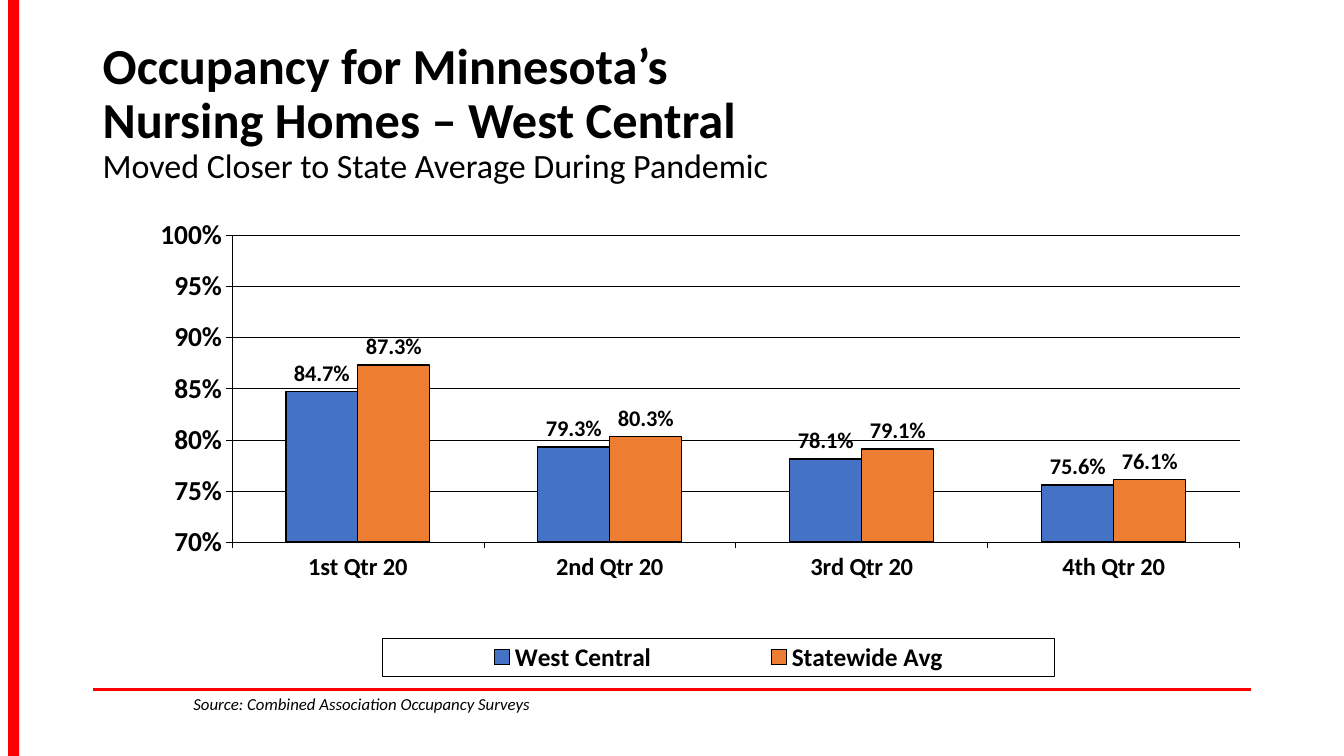
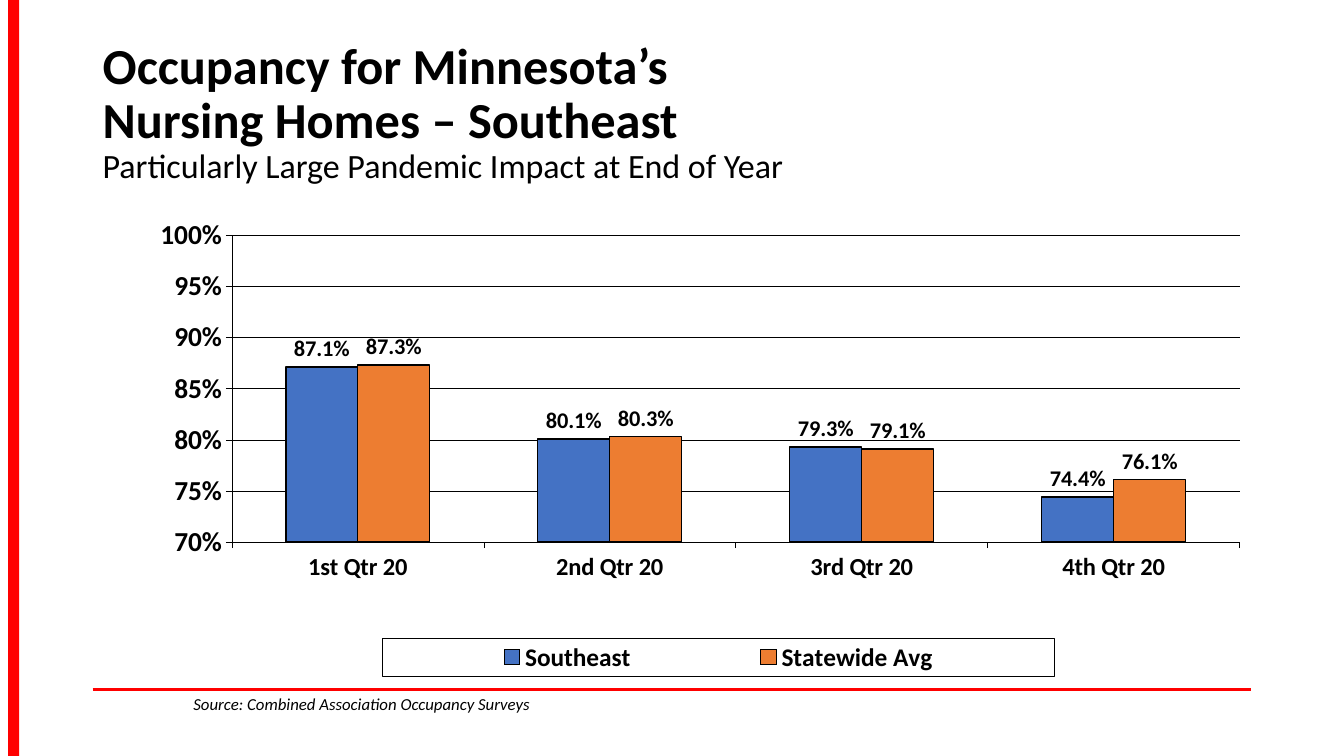
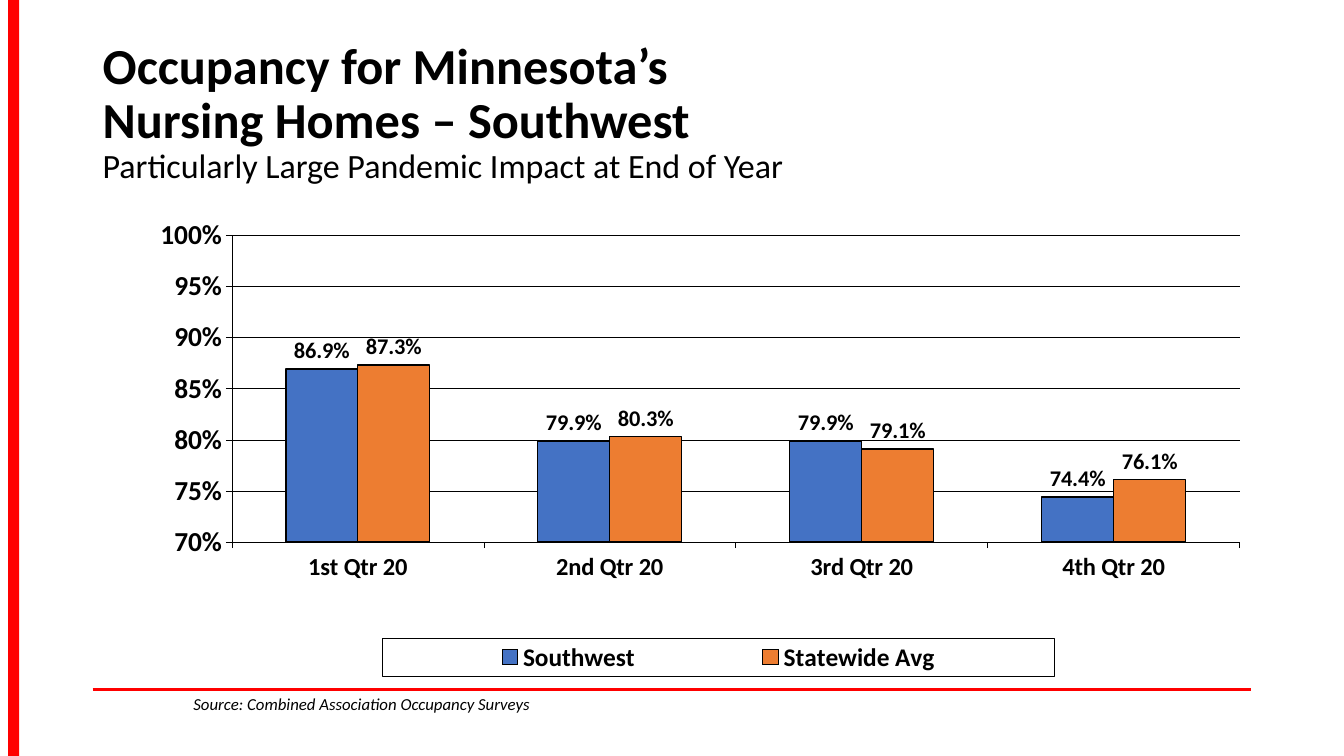
from lxml import etree
from pptx import Presentation
from pptx import util as u
from pptx.chart.data import CategoryChartData
from pptx.dml.color import RGBColor
from pptx.enum import chart as charts, shapes, text
from pptx.oxml import parse_xml
from pptx.oxml.ns import nsdecls, qn

RED = RGBColor(0xFF, 0x00, 0x00)
BLACK = RGBColor(0x00, 0x00, 0x00)
BLUE = RGBColor(0x44, 0x72, 0xC4)
ORANGE = RGBColor(0xED, 0x7D, 0x31)
FACE = "Calibri"

QUARTERS = ["1st Qtr 20", "2nd Qtr 20", "3rd Qtr 20", "4th Qtr 20"]
STATEWIDE = [0.873, 0.803, 0.791, 0.761]
LARGE_IMPACT = "Particularly Large Pandemic Impact at End of Year"
REGIONS = [
    ("West Central", "Moved Closer to State Average During Pandemic", [0.847, 0.793, 0.781, 0.756]),
    ("Southeast", LARGE_IMPACT, [0.871, 0.801, 0.793, 0.744]),
    ("Southwest", LARGE_IMPACT, [0.869, 0.799, 0.799, 0.744]),
]


def style(font, size, bold=False, italic=False):
    font.name = FACE
    font.size = u.Pt(size)
    font.bold = bold
    font.italic = italic
    font.color.rgb = BLACK


def place(parent, index, x, y, w, h, target=""):
    for old in parent.findall(qn("c:layout")):
        parent.remove(old)
    parent.insert(index, parse_xml(
        f'<c:layout {nsdecls("c")}><c:manualLayout>{target}'
        '<c:xMode val="edge"/><c:yMode val="edge"/>'
        f'<c:x val="{x}"/><c:y val="{y}"/><c:w val="{w}"/><c:h val="{h}"/>'
        '</c:manualLayout></c:layout>'))


prs = Presentation()
prs.slide_width = W = u.Inches(13.33)
prs.slide_height = H = u.Inches(7.5)
margin = u.Inches(0.92)
content = W - 2 * margin
rule_y = u.Inches(6.84)

for region, finding, occupancy in REGIONS:
    slide = prs.slides.add_slide(prs.slide_layouts[6])

    rule = slide.shapes.add_connector(
        shapes.MSO_CONNECTOR.STRAIGHT, margin, rule_y, margin + content, rule_y)
    rule.line.color.rgb = RED
    rule.line.width = u.Pt(2)
    etree.SubElement(rule._element.spPr, qn("a:effectLst"))

    band = slide.shapes.add_shape(
        shapes.MSO_SHAPE.RECTANGLE, u.Inches(0.08), 0, u.Inches(0.11), H)
    band.shadow.inherit = False
    band.fill.solid()
    band.fill.fore_color.rgb = RED
    band.line.fill.background()

    title = slide.shapes.add_textbox(margin, u.Inches(0.4), content, u.Inches(1.45)).text_frame
    title.word_wrap = True
    title.vertical_anchor = text.MSO_ANCHOR.MIDDLE
    heading = title.paragraphs[0]
    heading.text = f"Occupancy for Minnesota’s\vNursing Homes – {region}\v{finding}"
    heading.line_spacing = 0.9
    for run, size in zip(heading.runs, (36, 36, 24.3)):
        style(run.font, size, bold=size == 36)

    data = CategoryChartData(number_format="0.0%")
    data.categories = QUARTERS
    data.add_series(region, occupancy)
    data.add_series("Statewide Avg", STATEWIDE)
    chart = slide.shapes.add_chart(
        charts.XL_CHART_TYPE.COLUMN_CLUSTERED,
        margin, u.Inches(2), content, u.Inches(4.76), data).chart
    style(chart.font, 19.6, bold=True)
    chart.font.name = "Times New Roman"
    chart.has_title = False

    columns = chart.plots[0]
    columns.vary_by_categories = False
    columns.gap_width = 150
    columns.overlap = 0
    for series, color in zip(columns.series, (BLUE, ORANGE)):
        series.format.fill.solid()
        series.format.fill.fore_color.rgb = color
        series.format.line.color.rgb = BLACK
        series.format.line.width = u.Pt(1.09)

    columns.has_data_labels = True
    labels = columns.data_labels
    labels.show_value = True
    labels.number_format = "0.0%"
    labels.number_format_is_linked = False
    labels.position = charts.XL_LABEL_POSITION.OUTSIDE_END
    style(labels.font, 16, bold=True)

    percent = chart.value_axis
    percent.minimum_scale = 0.7
    percent.maximum_scale = 1
    percent.major_unit = 0.05
    percent.has_major_gridlines = True
    percent.tick_labels.number_format = "0%"
    percent.tick_labels.number_format_is_linked = False
    for axis, size in ((chart.category_axis, 17.5), (percent, 19.6)):
        axis.major_tick_mark = charts.XL_TICK_MARK.OUTSIDE
        axis.minor_tick_mark = charts.XL_TICK_MARK.NONE
        style(axis.tick_labels.font, size, bold=True)
    for line in (chart.category_axis.format.line, percent.format.line,
                 percent.major_gridlines.format.line):
        line.color.rgb = BLACK
        line.width = u.Pt(0.27)

    chart.has_legend = True
    legend = chart.legend
    legend.position = charts.XL_LEGEND_POSITION.BOTTOM
    legend.include_in_layout = False
    style(legend.font, 18.1, bold=True)
    place(legend._element, 1, 0.25, 0.91, 0.58, 0.08)
    legend._element.find(qn("c:overlay")).addnext(parse_xml(
        f'<c:spPr {nsdecls("c", "a")}><a:noFill/><a:ln w="3429"><a:solidFill>'
        f'<a:srgbClr val="{BLACK}"/></a:solidFill></a:ln></c:spPr>'))
    place(chart._chartSpace.chart.plotArea, 0, 0.12, 0.07, 0.87, 0.64,
          '<c:layoutTarget val="inner"/>')

    source = slide.shapes.add_textbox(
        u.Inches(1.82), u.Inches(6.83), u.Inches(5.27), u.Inches(0.5)).text_frame
    source.word_wrap = True
    source.text = "Source: Combined Association Occupancy Surveys"
    style(source.paragraphs[0].runs[0].font, 12, italic=True)

prs.save("out.pptx")
